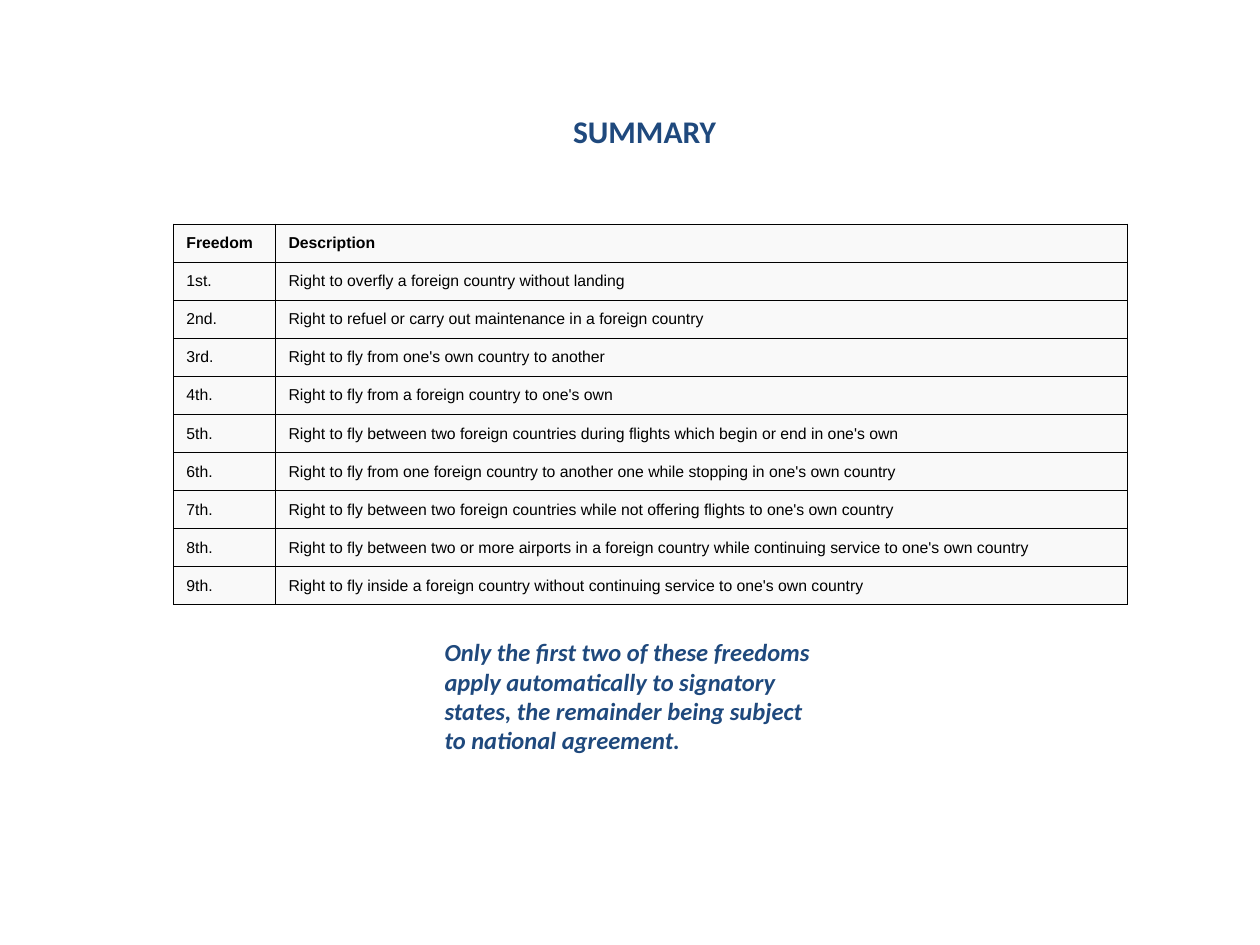
from lxml import etree
from pptx import Presentation, util as u
from pptx.dml.color import RGBColor
from pptx.enum import text
from pptx.oxml.ns import qn

WIDTH, HEIGHT = u.Inches(10), u.Inches(7.5)
NAVY, BLACK, PALE = "1F497D", "000000", "F9F9F9"
COLUMNS = (0.81, 6.76)
ROW_HEIGHT = 0.302
RIGHTS = (
    ("Freedom", "Description"),
    ("1st.", "Right to overfly a foreign country without landing"),
    ("2nd.", "Right to refuel or carry out maintenance in a foreign country"),
    ("3rd.", "Right to fly from one's own country to another"),
    ("4th.", "Right to fly from a foreign country to one's own"),
    ("5th.", "Right to fly between two foreign countries during flights which begin or end in one's own"),
    ("6th.", "Right to fly from one foreign country to another one while stopping in one's own country"),
    ("7th.", "Right to fly between two foreign countries while not offering flights to one's own country"),
    ("8th.", "Right to fly between two or more airports in a foreign country while continuing service to one's own country"),
    ("9th.", "Right to fly inside a foreign country without continuing service to one's own country"),
)


def colour(hex_value):
    """Turn a hex string into a colour."""
    return RGBColor.from_string(hex_value)


def style(paragraph, face, size, ink, bold=False, italic=False):
    """Set the font of a whole paragraph."""
    font = paragraph.font
    font.name, font.size = face, u.Pt(size)
    font.bold, font.italic = bold, italic
    font.color.rgb = colour(ink)


def add_text(slide, words, left, top, width, height, size, italic=False):
    """Add a bold navy text box placed in inches."""
    box = slide.shapes.add_textbox(*map(u.Inches, (left, top, width, height)))
    frame = box.text_frame
    frame.word_wrap = True
    frame.auto_size = text.MSO_AUTO_SIZE.SHAPE_TO_FIT_TEXT
    frame.vertical_anchor = text.MSO_ANCHOR.MIDDLE
    frame.text = words
    style(frame.paragraphs[0], "Calibri", size, NAVY, True, italic)


def add_borders(cell, ink, points):
    """Draw all four borders of a cell, ahead of its fill."""
    properties = cell._tc.get_or_add_tcPr()
    for index, side in enumerate(("lnL", "lnR", "lnT", "lnB")):
        line = etree.Element(qn(f"a:{side}"), w=str(u.Pt(points)))
        fill = etree.SubElement(line, qn("a:solidFill"))
        etree.SubElement(fill, qn("a:srgbClr"), val=ink)
        properties.insert(index, line)


def add_rights_table(slide, left, top):
    """Add the bordered table of freedoms."""
    size = (sum(COLUMNS), ROW_HEIGHT * len(RIGHTS))
    table = slide.shapes.add_table(
        len(RIGHTS), len(COLUMNS), *map(u.Inches, (left, top, *size))).table
    table.first_row = table.horz_banding = False
    for column, width in zip(table.columns, COLUMNS):
        column.width = u.Inches(width)
    for r, right in enumerate(RIGHTS):
        table.rows[r].height = u.Inches(ROW_HEIGHT)
        for c, words in enumerate(right):
            cell = table.cell(r, c)
            cell.text = words
            cell.vertical_anchor = text.MSO_ANCHOR.MIDDLE
            cell.fill.solid()
            cell.fill.fore_color.rgb = colour(PALE)
            style(cell.text_frame.paragraphs[0], "Arial", 9, BLACK, bold=r == 0)
            add_borders(cell, BLACK, 0.75)


def main():
    """Build and save the summary slide."""
    deck = Presentation()
    deck.slide_width, deck.slide_height = WIDTH, HEIGHT
    slide = deck.slides.add_slide(deck.slide_layouts[6])
    add_rights_table(slide, 1.38, 1.78)
    add_text(slide, "SUMMARY", 4.45, 0.84, 1.5, 0.4, 18)
    add_text(slide, "Only the first two of these freedoms apply automatically to signatory "
             "states, the remainder being subject to national agreement.",
             3.43, 5.01, 3.15, 1.03, 14, italic=True)
    deck.save("out.pptx")


if __name__ == "__main__":
    main()
